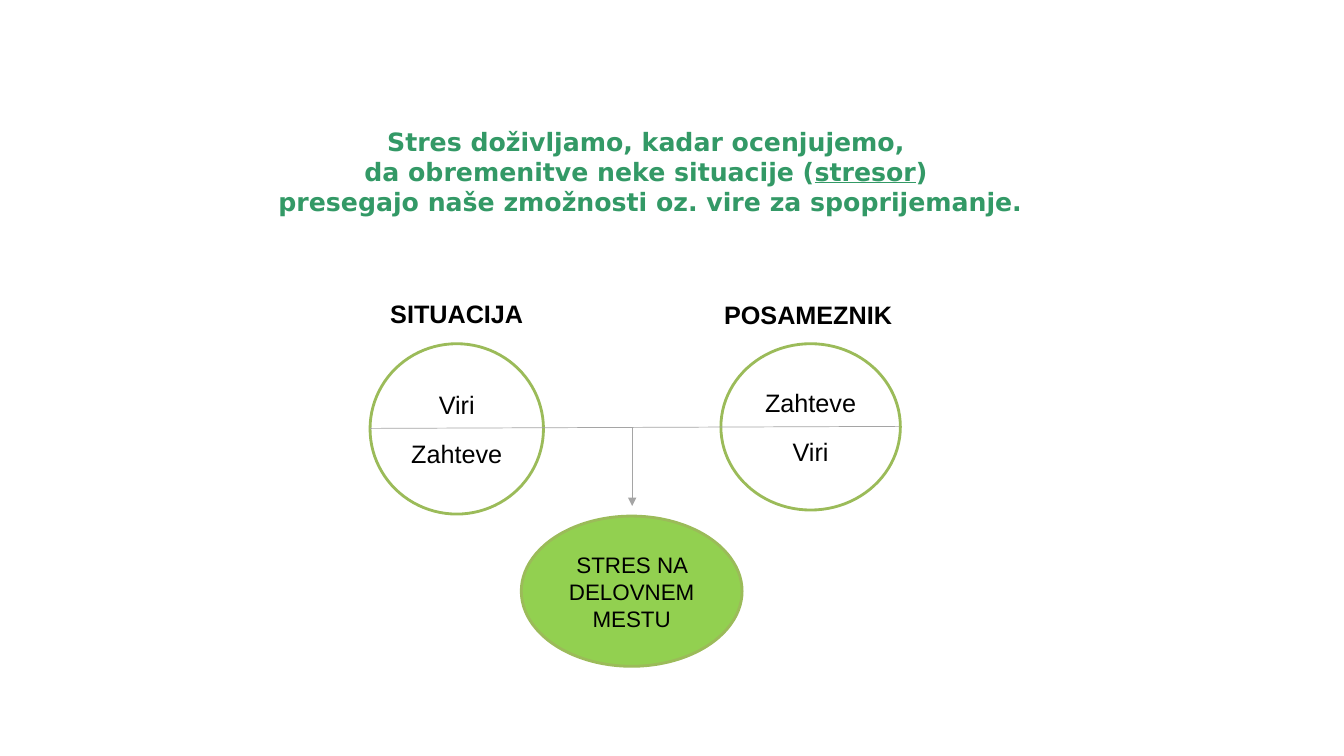
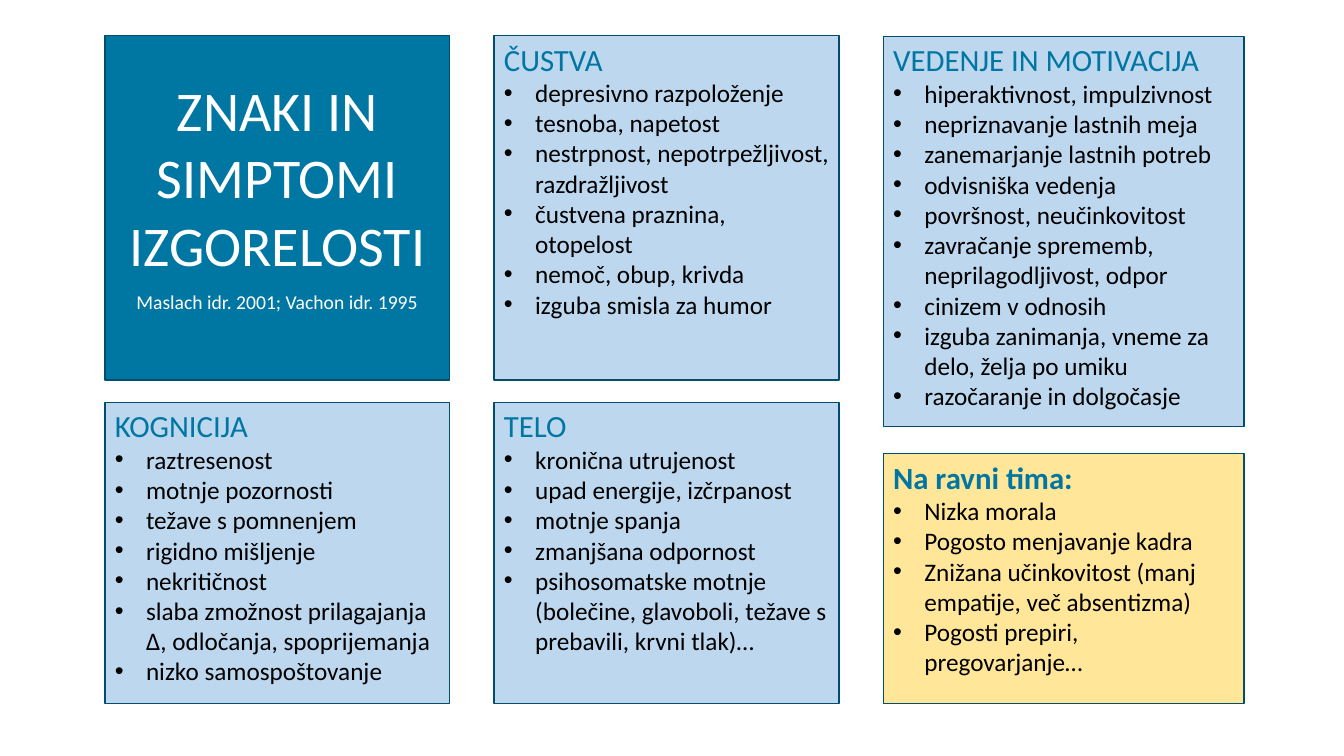
from lxml import etree
from pptx import Presentation
from pptx import util as u
from pptx.dml.color import RGBColor
from pptx.enum import shapes, text
from pptx.oxml.ns import qn

INK = {
    "black": "000000", "white": "FFFFFF", "gray": "A5A5A5",
    "title": "339966", "rim": "9BBB59", "lime": "92D050",
    "blue": "0076A3", "navy": "004E6D", "sky": "BDD7EE", "sand": "FFE699",
}
LEFT, MID = text.PP_ALIGN.LEFT, text.PP_ALIGN.CENTER
OVAL, RECT = shapes.MSO_SHAPE.OVAL, shapes.MSO_SHAPE.RECTANGLE
INDENT = u.Inches(0.31)


def write(frame, words, size=18, font="Arial", color="black", bold=False,
          align=MID, before=0, bullet=False):
    """Add one paragraph; parts between bars are underlined."""
    para = frame.paragraphs[0]
    if para.runs:
        para = frame.add_paragraph()
    para.alignment = align
    para.space_before = u.Pt(before)
    if bullet:
        props = para._p.get_or_add_pPr()
        props.set("marL", str(INDENT))
        props.set("indent", str(-INDENT))
        etree.SubElement(props, qn("a:buFont")).set("typeface", "Arial")
        etree.SubElement(props, qn("a:buChar")).set("char", "•")
    for i, part in enumerate(words.split("|")):
        run = para.add_run()
        run.text = part
        run.font.size = u.Pt(size)
        run.font.name = font
        run.font.bold = bold
        run.font.underline = i % 2 == 1
        run.font.color.rgb = RGBColor.from_string(INK[color])


def place(slide, box, kind=None, fill=None, rim=None, width=1, anchor="MIDDLE"):
    """Add a shape, or a text box if no kind is given, and return its frame."""
    area = [u.Inches(n) for n in box]
    if kind is None:
        item = slide.shapes.add_textbox(*area)
    else:
        item = slide.shapes.add_shape(kind, *area)
        item.shadow.inherit = False
        item.fill.solid()
        item.fill.fore_color.rgb = RGBColor.from_string(INK[fill])
        item.line.color.rgb = RGBColor.from_string(INK[rim])
        item.line.width = u.Pt(width)
    frame = item.text_frame
    frame.word_wrap = True
    frame.vertical_anchor = text.MSO_ANCHOR[anchor]
    return frame


deck = Presentation()
deck.slide_width, deck.slide_height = u.Inches(13.33), u.Inches(7.5)
blank = deck.slide_layouts[6]

# Slide 1: how stress arises
slide = deck.slides.add_slide(blank)
head = place(slide, (2.16, 0.59, 8.58, 1.92), anchor="TOP")
head.margin_top = u.Inches(0.66)
for line in ("Stres doživljamo, kadar ocenjujemo, ",
             "da obremenitve neke situacije (|stresor|) ",
             "presegajo naše zmožnosti oz. vire za spoprijemanje."):
    write(head, line, font="DejaVu Sans", color="title", bold=True)

sides = [
    ("SITUACIJA", (3.67, 2.89, 1.72, 0.43), (3.67, 3.41, 1.72, 1.69), ("Viri", "Zahteve")),
    ("POSAMEZNIK", (6.96, 2.91, 2.11, 0.41), (7.15, 3.41, 1.78, 1.65), ("Zahteve", "Viri")),
]
for name, label, oval, (top, low) in sides:
    write(place(slide, label), name, bold=True)
    frame = place(slide, oval, OVAL, "white", "rim", 2)
    write(frame, top)
    write(frame, low, before=13.5)

stress = place(slide, (5.17, 5.12, 2.19, 1.49), OVAL, "lime", "rim", 2)
write(stress, "STRES NA DELOVNEM MESTU", size=16)

for ends, arrow in (((3.67, 4.25, 8.92, 4.23), False), ((6.27, 4.25, 6.27, 5.02), True)):
    link = slide.shapes.add_connector(shapes.MSO_CONNECTOR.STRAIGHT,
                                      *[u.Inches(n) for n in ends])
    link.line.color.rgb = RGBColor.from_string(INK["gray"])
    link.line.width = u.Pt(0.5)
    if arrow:
        etree.SubElement(link.line._get_or_add_ln(), qn("a:tailEnd")).set("type", "triangle")
    etree.SubElement(link._element.spPr, qn("a:effectLst"))

# Slide 2: signs of burnout, in three columns
slide = deck.slides.add_slide(blank)
START, STEP, WIDE, LAST = 1.04, 3.86, 3.42, 3.58
TOP, LOW, END = 0.35, 3.99, 6.98

title = place(slide, (START, TOP, WIDE, WIDE), RECT, "blue", "navy")
title.margin_bottom = u.Inches(0.31)
write(title, "ZNAKI IN SIMPTOMI IZGORELOSTI", size=40, font="Calibri", color="white")
write(title, "Maslach idr. 2001; Vachon idr. 1995", size=14, font="Calibri",
      color="white", before=9)

# column, top, bottom, fill, heading, points
cards = [
    (1, TOP, TOP + WIDE, "sky", "ČUSTVA", [
        "depresivno razpoloženje", "tesnoba, napetost",
        "nestrpnost, nepotrpežljivost, razdražljivost",
        "čustvena praznina, otopelost", "nemoč, obup, krivda",
        "izguba smisla za humor"]),
    (0, LOW, END, "sky", "KOGNICIJA", [
        "raztresenost", "motnje pozornosti", "težave s pomnenjem",
        "rigidno mišljenje", "nekritičnost",
        "slaba zmožnost prilagajanja Δ, odločanja, spoprijemanja",
        "nizko samospoštovanje"]),
    (1, LOW, END, "sky", "TELO", [
        "kronična utrujenost", "upad energije, izčrpanost", "motnje spanja",
        "zmanjšana odpornost",
        "psihosomatske motnje (bolečine, glavoboli, težave s prebavili, krvni tlak)…"]),
    (2, 0.36, 4.23, "sky", "VEDENJE IN MOTIVACIJA", [
        "hiperaktivnost, impulzivnost", "nepriznavanje lastnih meja",
        "zanemarjanje lastnih potreb", "odvisniška vedenja",
        "površnost, neučinkovitost",
        "zavračanje sprememb, neprilagodljivost, odpor", "cinizem v odnosih",
        "izguba zanimanja, vneme za delo, želja po umiku",
        "razočaranje in dolgočasje"]),
    (2, 4.5, END, "sand", "Na ravni tima:", [
        "Nizka morala", "Pogosto menjavanje kadra",
        "Znižana učinkovitost (manj empatije, več absentizma)",
        "Pogosti prepiri, pregovarjanje…"]),
]
for col, top, low, fill, name, points in cards:
    box = (START + col * STEP, top, LAST if col == 2 else WIDE, low - top)
    card = place(slide, box, RECT, fill, "navy", anchor="TOP")
    write(card, name, size=22, font="Calibri", color="blue", bold=fill == "sand", align=LEFT)
    for point in points:
        write(card, point, font="Calibri", align=LEFT, bullet=True)

deck.save("out.pptx")
